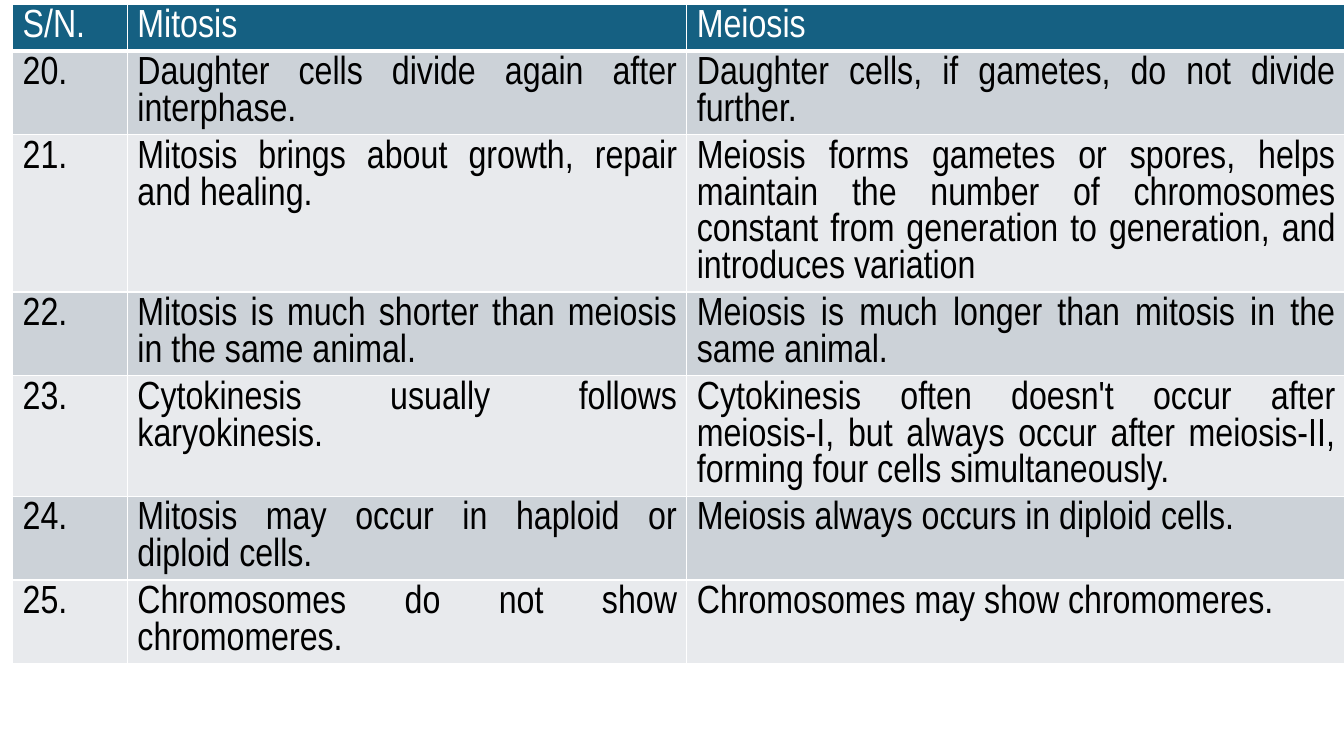
import pptx
import pptx.dml.color
import pptx.enum.text
import pptx.oxml
import pptx.oxml.ns
import pptx.util

Pt = pptx.util.Pt

COLUMN_WIDTHS = (82, 399.6, 470.2)
ROW_HEIGHT = 29.5
HEADER_FILL = "156082"
BAND_FILLS = ("E8EAED", "CCD2D8")
WHITE = "FFFFFF"
BLACK = "000000"

FIRST_NUMBER = 20
HEADINGS = ("S/N.", "Mitosis", "Meiosis")
DIFFERENCES = (
    ("Daughter cells divide again after interphase.",
     "Daughter cells, if gametes, do not divide further."),
    ("Mitosis brings about growth, repair and healing.",
     "Meiosis forms gametes or spores, helps maintain the number of chromosomes "
     "constant from generation to generation, and introduces variation"),
    ("Mitosis is much shorter than meiosis in the same animal.",
     "Meiosis is much longer than mitosis in the same animal."),
    ("Cytokinesis usually follows karyokinesis.",
     "Cytokinesis often doesn't occur after meiosis-I, but always occur after "
     "meiosis-II, forming four cells simultaneously."),
    ("Mitosis may occur in haploid or diploid cells.",
     "Meiosis always occurs in diploid cells."),
    ("Chromosomes do not show chromomeres.",
     "Chromosomes may show chromomeres."),
)


def rgb(value):
    return pptx.dml.color.RGBColor.from_string(value)


def set_borders(cell, bottom_width):
    """Draw white borders, 1 pt wide except at the bottom."""
    properties = cell._tc.get_or_add_tcPr()
    for side, width in (("L", 1), ("R", 1), ("T", 1), ("B", bottom_width)):
        properties.append(pptx.oxml.parse_xml(
            f'<a:ln{side} {pptx.oxml.ns.nsdecls("a")} w="{Pt(width)}">'
            f'<a:solidFill><a:srgbClr val="{WHITE}"/></a:solidFill></a:ln{side}>'))


def fill_cell(cell, text, fill, color, bottom_width):
    set_borders(cell, bottom_width)
    cell.fill.solid()
    cell.fill.fore_color.rgb = rgb(fill)
    para = cell.text_frame.paragraphs[0]
    para.alignment = pptx.enum.text.PP_ALIGN.JUSTIFY
    span = para.add_run()
    span.text = text
    font_format = {"name": "Arial Narrow", "size": Pt(28), "bold": False}
    for name, value in font_format.items():
        setattr(span.font, name, value)
    span.font.color.rgb = rgb(color)


def add_comparison_table(page, rows):
    frame = page.shapes.add_table(
        len(rows), len(COLUMN_WIDTHS), Pt(9), Pt(3),
        Pt(sum(COLUMN_WIDTHS)), Pt(ROW_HEIGHT * len(rows)))
    table = frame.table
    for column, width in zip(table.columns, COLUMN_WIDTHS):
        column.width = Pt(width)
    for index, (row, texts) in enumerate(zip(table.rows, rows)):
        row.height = Pt(ROW_HEIGHT)
        if index == 0:
            look = (HEADER_FILL, WHITE, 3)
        else:
            look = (BAND_FILLS[index % 2], BLACK, 1)
        for cell, text in zip(row.cells, texts):
            fill_cell(cell, text, *look)


def main():
    deck = pptx.Presentation()
    deck.slide_width, deck.slide_height = Pt(960), Pt(540)
    page = deck.slides.add_slide(deck.slide_layouts[6])
    numbered = [(f"{number}.", *texts)
                for number, texts in enumerate(DIFFERENCES, FIRST_NUMBER)]
    add_comparison_table(page, [HEADINGS, *numbered])
    deck.save("out.pptx")


if __name__ == "__main__":
    main()
